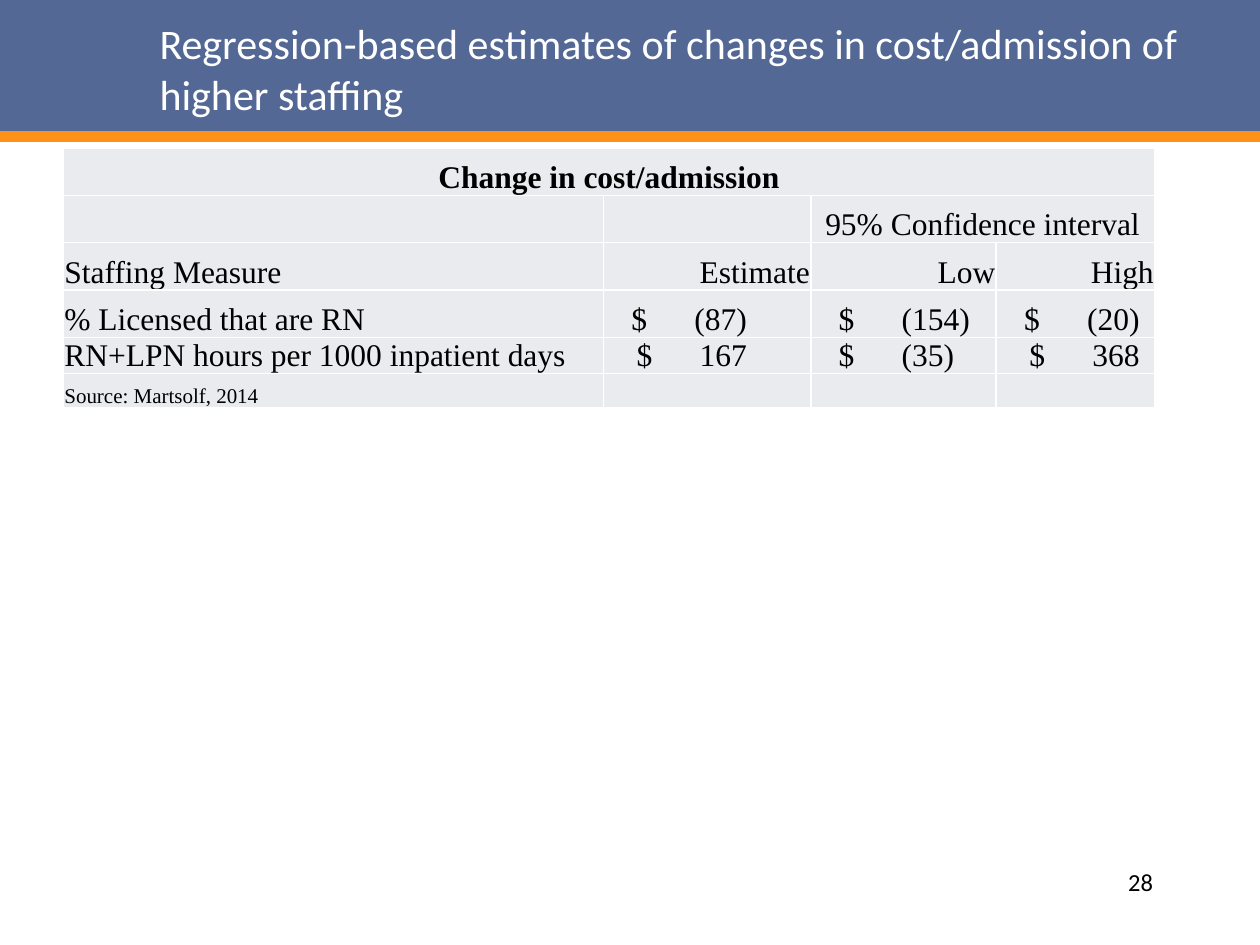
import lxml.etree
import pptx
import pptx.dml.color
import pptx.enum.shapes
import pptx.enum.text
import pptx.oxml
import pptx.oxml.ns
import pptx.util

Pt = pptx.util.Pt
ALIGN = pptx.enum.text.PP_ALIGN
ANCHOR = pptx.enum.text.MSO_ANCHOR
qn = pptx.oxml.ns.qn


def color(value):
    return pptx.dml.color.RGBColor.from_string(value)


class SlideBuilder:
    band_fill = "536895"
    rule_color = "FE9118"
    cell_fill = "E9EBEF"
    border_color = "FFFFFF"
    title_color = "FFFFFF"
    text_color = "000000"
    heading_font = "Calibri"
    table_font = "Times New Roman"

    def __init__(self, slide):
        self.slide = slide

    def format_paragraph(self, paragraph, font, size, fill, align=ALIGN.LEFT, bold=False):
        paragraph.alignment = align
        paragraph.font.name = font
        paragraph.font.size = Pt(size)
        paragraph.font.bold = bold
        paragraph.font.color.rgb = color(fill)

    def title(self, text, left, top, width, height):
        title = self.slide.shapes.title
        title.left, title.top, title.width, title.height = map(Pt, (left, top, width, height))
        frame = title.text_frame
        frame.text = text
        frame.word_wrap = True
        frame.auto_size = pptx.enum.text.MSO_AUTO_SIZE.NONE
        frame.vertical_anchor = ANCHOR.MIDDLE
        self.format_paragraph(frame.paragraphs[0], self.heading_font, 24, self.title_color)

    def send_behind_title(self, shape):
        self.slide.shapes.title.element.addprevious(shape.element)

    def band(self, left, top, width, height):
        band = self.slide.shapes.add_shape(
            pptx.enum.shapes.MSO_SHAPE.RECTANGLE, Pt(left), Pt(top), Pt(width), Pt(height))
        band.shadow.inherit = False
        band.fill.solid()
        band.fill.fore_color.rgb = color(self.band_fill)
        band.line.fill.background()
        self.send_behind_title(band)

    def rule(self, left, top, right, weight):
        rule = self.slide.shapes.add_connector(
            pptx.enum.shapes.MSO_CONNECTOR.STRAIGHT, Pt(left), Pt(top), Pt(right), Pt(top))
        rule.line.color.rgb = color(self.rule_color)
        rule.line.width = Pt(weight)
        lxml.etree.SubElement(rule.element.spPr, qn("a:effectLst"))
        self.send_behind_title(rule)

    def page_number(self, text, left, top, width, height):
        box = self.slide.shapes.add_textbox(Pt(left), Pt(top), Pt(width), Pt(height))
        box.text_frame.word_wrap = True
        box.text_frame.text = text
        self.format_paragraph(
            box.text_frame.paragraphs[0], self.heading_font, 14, self.text_color, ALIGN.RIGHT)

    def table(self, left, top, widths, heights):
        frame = self.slide.shapes.add_table(
            len(heights), len(widths), Pt(left), Pt(top), Pt(sum(widths)), Pt(sum(heights)))
        table = frame.table
        table.first_row = False
        table.horz_banding = False
        for column, width in zip(table.columns, widths):
            column.width = Pt(width)
        for row, height in zip(table.rows, heights):
            row.height = Pt(height)
        return table

    def cell(self, cell, text, size=18, align=ALIGN.LEFT, bold=False):
        cell.fill.solid()
        cell.fill.fore_color.rgb = color(self.cell_fill)
        cell.vertical_anchor = ANCHOR.BOTTOM
        cell.margin_left = cell.margin_right = cell.margin_top = Pt(0.5)
        cell.margin_bottom = 0
        cell.text = text
        self.format_paragraph(
            cell.text_frame.paragraphs[0], self.table_font, size, self.text_color, align, bold)
        self.borders(cell)

    def borders(self, cell):
        properties = cell._tc.get_or_add_tcPr()
        for index, side in enumerate(("lnL", "lnR", "lnT", "lnB")):
            line = lxml.etree.Element(qn(f"a:{side}"), w=str(Pt(1)))
            fill = lxml.etree.SubElement(line, qn("a:solidFill"))
            lxml.etree.SubElement(fill, qn("a:srgbClr"), val=self.border_color)
            properties.insert(index, line)

    def money_cell(self, cell, amount, width):
        indent, inset = (16, 0.5) if amount.startswith("(") else (19, 5)
        paragraph = cell.text_frame.paragraphs[0]
        tabs = lxml.etree.SubElement(paragraph._p.get_or_add_pPr(), qn("a:tabLst"))
        lxml.etree.SubElement(
            tabs, qn("a:tab"), pos=str(Pt(width - indent - inset)), algn="r")
        self.cell(cell, f"$\t{amount}")
        cell.margin_left = Pt(indent)


def main():
    presentation = pptx.Presentation()
    presentation.slide_width = Pt(720)
    presentation.slide_height = Pt(540)
    slide = presentation.slides.add_slide(presentation.slide_layouts[5])
    builder = SlideBuilder(slide)

    builder.band(0, 0, 720, 78)
    builder.rule(0, 78, 720, 6)
    builder.title(
        "Regression-based estimates of changes in cost/admission of higher staffing",
        84, 0, 630, 78)

    widths = (308.5, 118.5, 106, 90.5)
    table = builder.table(36.3, 84.5, widths, (27.1, 27.1, 27.1, 27.1, 20.3, 19.8))
    rows = (
        ("Change in cost/admission", "", "", ""),
        ("", "", "95% Confidence interval", ""),
        ("Staffing Measure", "Estimate", "Low", "High"),
        ("% Licensed that are RN", "(87)", "(154)", "(20)"),
        ("RN+LPN hours per 1000 inpatient days", "167", "(35)", "368"),
        ("Source: Martsolf, 2014", "", "", ""),
    )
    for row, texts in enumerate(rows):
        for column, text in enumerate(texts):
            cell = table.cell(row, column)
            if row in (3, 4) and column:
                builder.money_cell(cell, text, widths[column])
            else:
                align = ALIGN.CENTER if row < 2 else ALIGN.RIGHT if column else ALIGN.LEFT
                builder.cell(cell, text, 12 if row == 5 else 18, align, row == 0)
    table.cell(0, 0).merge(table.cell(0, 3))
    table.cell(1, 2).merge(table.cell(1, 3))

    builder.page_number("28", 516, 492, 150, 36)
    presentation.save("out.pptx")


if __name__ == "__main__":
    main()
